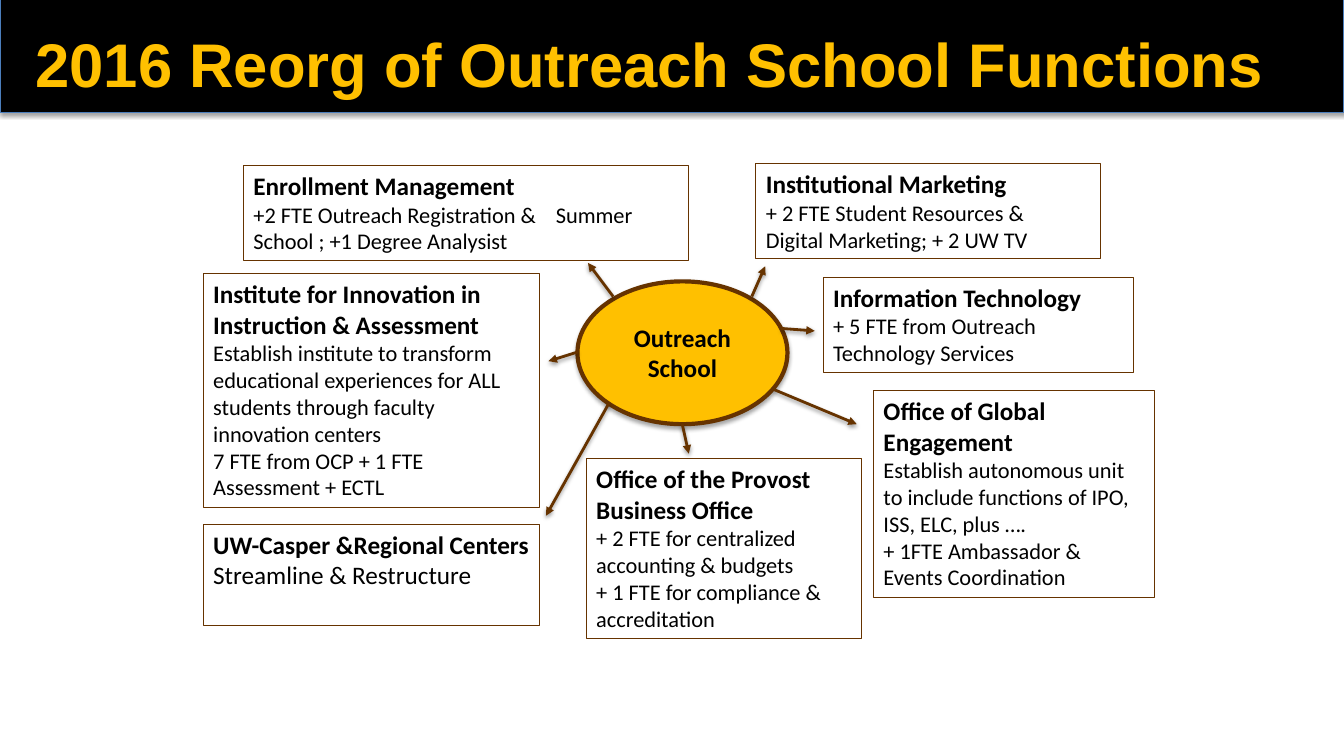
from pptx import Presentation
from pptx import util as u
from pptx.dml import color
from pptx.enum import shapes, text
from pptx.oxml import ns, parse_xml

CELL = u.Inches(1 / 12)  # the slide is a grid of 160 columns by 90 rows
COLUMNS, ROWS = 160, 90
BLACK, GOLD, BROWN, BLUE = "000000", "FFC000", "663300", "4B7EBC"

# Offices: box in the diagram, heading lines, body lines, body size, tab stop
OFFICES = [
    ((45.8, 35.6, 32.8, 21.4), ["Office of the Provost Business Office"],
     ["+ 2 FTE for centralized \taccounting & budgets",
      "+ 1 FTE for compliance & \taccreditation"], 16, 0.19),
    ((5, 0.7, 53, 11.3), ["Enrollment Management"],
     ["+2 FTE Outreach Registration & \tSummer School ; +1 Degree Analysist"], 16, 0.31),
    ((66, 0.5, 41, 11.3), ["Institutional Marketing"],
     ["+ 2 FTE Student Resources & \tDigital Marketing; + 2 UW TV"], 16, 0.19),
    ((0.2, 43.4, 40, 12.1), ["UW-Casper &Regional Centers"],
     ["Streamline & Restructure"], 18, 0.19),
    ((74, 14, 37, 11.3), ["Information Technology"],
     ["+ 5 FTE from Outreach \tTechnology Services"], 16, 0.19),
    ((80, 27.5, 33.5, 24.6), ["Office of Global", "Engagement"],
     ["Establish autonomous unit to include functions of IPO, ISS, ELC, plus ….",
      "+ 1FTE Ambassador & \tEvents Coordination"], 16, 0.19),
    ((0.2, 13.6, 40, 27.8), ["Institute for Innovation in Instruction & Assessment"],
     ["Establish institute to transform educational experiences for ALL students "
      "through faculty innovation centers",
      "7 FTE from OCP + 1 FTE Assessment + ECTL"], 16, 0.19),
]
HUB = (44.75, 14.5, 25, 17)
# Arrows from the hub: start and end in the diagram
SPOKES = [
    (49, 16.3, 46, 12.3), (65.5, 16.3, 67.1, 12.7), (44.8, 22.9, 41.3, 24),
    (48.5, 29, 41, 42.4), (57.2, 31.4, 58, 35), (68.2, 27.4, 78, 31.5),
    (69, 20.1, 73, 20.4),
]


def rgb(value):
    return color.RGBColor.from_string(value)


def emu(*cells):
    return [round(cell * CELL) for cell in cells]


def within(box, part):
    """Place a part relative to the top left corner of its box."""
    left, top, width, height = part
    return emu(box[0] + left, box[1] + top, width, height)


def outline(shape, hue, points):
    shape.line.color.rgb = rgb(hue)
    shape.line.width = u.Pt(points)


def add_shadow(shape, opacity, distance):
    shape._element.spPr.append(parse_xml(
        f'<a:effectLst {ns.nsdecls("a")}><a:outerShdw blurRad="{u.Pt(3.1)}" '
        f'dist="{u.Pt(distance)}" dir="5400000" rotWithShape="0">'
        f'<a:srgbClr val="000000"><a:alpha val="{opacity}000"/></a:srgbClr>'
        '</a:outerShdw></a:effectLst>'))


def write(paragraph, words, size=18, bold=False, hue=BLACK, font="Calibri",
          align=text.PP_ALIGN.LEFT, tab=None):
    paragraph.alignment = align
    if tab:
        paragraph._p.get_or_add_pPr().append(parse_xml(
            f'<a:tabLst {ns.nsdecls("a")}><a:tab pos="{u.Inches(tab)}" algn="l"/></a:tabLst>'))
    run = paragraph.add_run()
    run.text = words
    run.font.size, run.font.bold, run.font.name = u.Pt(size), bold, font
    run.font.color.rgb = rgb(hue)


def add_filled(slide, kind, place, fill, line, points):
    shape = slide.shapes.add_shape(kind, *place)
    shape.fill.solid()
    shape.fill.fore_color.rgb = rgb(fill)
    outline(shape, line, points)
    add_shadow(shape, 35, 1.8)
    return shape


def add_header(slide, box):
    add_filled(slide, shapes.MSO_SHAPE.RECTANGLE, emu(*box), BLACK, BLUE, 0.75)
    title = slide.shapes.title
    slide.shapes._spTree.append(title._element)  # bring the title above the band
    title.left, title.top, title.width, title.height = within(box, (3, 1.9, 149, 15))
    frame = title.text_frame
    frame.word_wrap, frame.auto_size = True, text.MSO_AUTO_SIZE.NONE
    frame.vertical_anchor = text.MSO_ANCHOR.TOP
    frame.margin_top, frame.margin_right = u.Inches(0.1), 0
    write(frame.paragraphs[0], "2016 Reorg of Outreach School Functions",
          size=44, bold=True, hue=GOLD, font="Arial")


def add_office(slide, place, headings, details, size, tab):
    office = slide.shapes.add_textbox(*place)
    outline(office, BROWN, 0.75)
    frame = office.text_frame
    frame.word_wrap = True
    for index, words in enumerate(headings + details):
        paragraph = frame.add_paragraph() if index else frame.paragraphs[0]
        if index < len(headings):
            write(paragraph, words, bold=True)
        else:
            write(paragraph, words, size=size, tab=tab if "\t" in words else None)


def add_spoke(slide, box, ends):
    x1, y1, x2, y2 = ends
    left, top = box[:2]
    spoke = slide.shapes.add_connector(
        shapes.MSO_CONNECTOR.STRAIGHT, *emu(left + x1, top + y1, left + x2, top + y2))
    outline(spoke, BROWN, 2)
    spoke.line._get_or_add_ln().append(
        parse_xml(f'<a:tailEnd {ns.nsdecls("a")} type="triangle"/>'))
    add_shadow(spoke, 38, 1.6)


def add_diagram(slide, box):
    for part, *content in OFFICES:
        add_office(slide, within(box, part), *content)
    hub = add_filled(slide, shapes.MSO_SHAPE.OVAL, within(box, HUB), GOLD, BROWN, 3)
    hub.text_frame.word_wrap = True
    hub.text_frame.vertical_anchor = text.MSO_ANCHOR.MIDDLE
    write(hub.text_frame.paragraphs[0], "Outreach School", bold=True,
          align=text.PP_ALIGN.CENTER)
    for ends in SPOKES:
        add_spoke(slide, box, ends)


def main():
    deck = Presentation()
    deck.slide_width, deck.slide_height = emu(COLUMNS, ROWS)
    slide = deck.slides.add_slide(deck.slide_layouts.get_by_name("Title Only"))
    add_header(slide, (0, 0, COLUMNS, 13.4))
    add_diagram(slide, (24, 19, 114, 58))
    deck.save("out.pptx")


if __name__ == "__main__":
    main()
